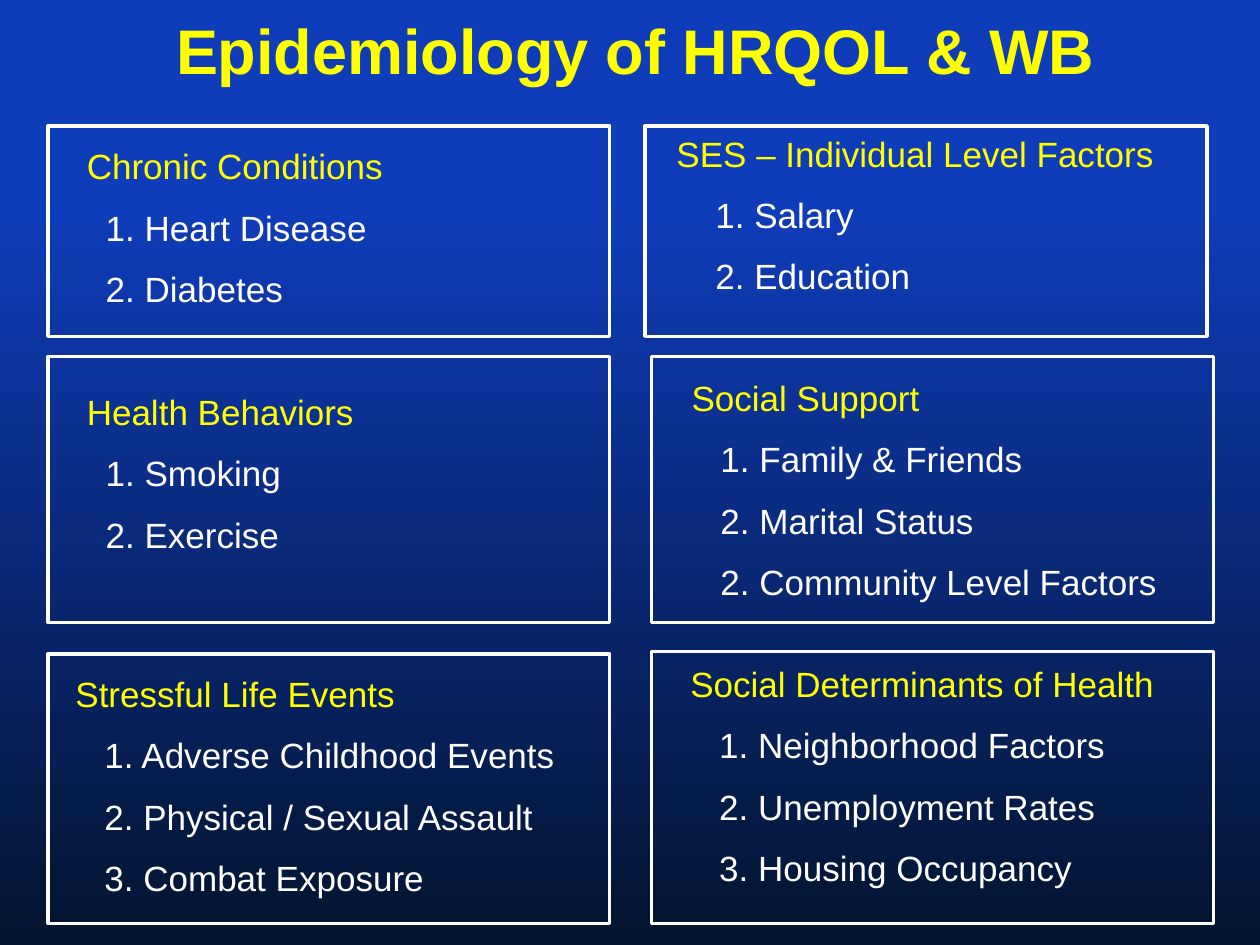
import pptx
import pptx.dml.color
import pptx.enum.shapes
import pptx.enum.text
import pptx.util
from dataclasses import dataclass

Inches = pptx.util.Inches
Pt = pptx.util.Pt
Color = pptx.dml.color.RGBColor.from_string


@dataclass(frozen=True)
class Theme:
    font: str = "Arial"
    accent: str = "FFFF00"
    light: str = "FFFFFF"
    sky: str = "0F3CB9"
    night: str = "03142F"
    title_size: int = 36
    text_size: int = 20
    item_gap: int = 11
    border: int = 2


THEME = Theme()
LEFT = 0.38
PANEL_WIDTH = 4.46

PANELS = [
    ((LEFT, 1, 1.67), (0.59, 1.1, 3.99), 0.15, "Chronic Conditions",
     ["1. Heart Disease", "2. Diabetes"]),
    ((5.12, 1, 1.67), (5.27, 1, 3.99), 0.31, "SES – Individual Level Factors",
     ["1. Salary", "2. Education"]),
    ((LEFT, 2.83, 2.11), (0.59, 3.05, 3.99), 0.15, "Health Behaviors",
     ["1. Smoking", "2. Exercise"]),
    ((5.17, 2.83, 2.11), (5.39, 2.94, 4.06), 0.23, "Social Support",
     ["1. Family & Friends", "2. Marital Status", "2. Community Level Factors"]),
    ((LEFT, 5.19, 2.14), (0.5, 5.29, 4.31), 0.23, "Stressful Life Events",
     ["1. Adverse Childhood Events", "2. Physical / Sexual Assault",
      "3. Combat Exposure"]),
    ((5.17, 5.17, 2.16), (5.38, 5.21, 4.48), 0.23, "Social Determinants of Health",
     ["1. Neighborhood Factors", "2. Unemployment Rates", "3. Housing Occupancy"]),
]


def paint_background(page):
    fill = page.background.fill
    fill.gradient()
    fill.gradient_angle = 270
    stops = zip(fill.gradient_stops, [(0.22, THEME.sky), (1, THEME.night)])
    for stop, (position, color) in stops:
        stop.position = position
        stop.color.rgb = Color(color)


def add_span(para, text, size, color, bold=False):
    span = para.add_run()
    span.text = text
    span.font.name = THEME.font
    span.font.size = Pt(size)
    span.font.bold = bold
    span.font.color.rgb = Color(color)


def fill_title(page, text):
    box = page.shapes.title
    box.left, box.top = Inches(0.42), Inches(0.19)
    box.width, box.height = Inches(9.25), Inches(0.5)
    frame = box.text_frame
    frame.auto_size = pptx.enum.text.MSO_AUTO_SIZE.NONE
    frame.vertical_anchor = pptx.enum.text.MSO_ANCHOR.MIDDLE
    para = frame.paragraphs[0]
    para.alignment = pptx.enum.text.PP_ALIGN.CENTER
    para.line_spacing = 0.85
    add_span(para, text, THEME.title_size, THEME.accent, bold=True)


def add_border(page, left, top, height):
    border = page.shapes.add_shape(
        pptx.enum.shapes.MSO_SHAPE.RECTANGLE,
        Inches(left), Inches(top), Inches(PANEL_WIDTH), Inches(height))
    border.shadow.inherit = False
    border.fill.background()
    border.line.color.rgb = Color(THEME.light)
    border.line.width = Pt(THEME.border)


def add_list(page, place, indent, heading, items):
    left, top, width = place
    height = 0.5 + 0.48 * len(items)
    box = page.shapes.add_textbox(
        Inches(left), Inches(top), Inches(width), Inches(height))
    frame = box.text_frame
    frame.word_wrap = True
    add_span(frame.paragraphs[0], heading, THEME.text_size, THEME.accent)
    for item in items:
        para = frame.add_paragraph()
        para.space_before = Pt(THEME.item_gap)
        para._p.get_or_add_pPr().set("marL", str(Inches(indent)))
        add_span(para, item, THEME.text_size, THEME.light)


def main():
    deck = pptx.Presentation()
    deck.slide_width, deck.slide_height = Inches(10), Inches(7.5)
    page = deck.slides.add_slide(deck.slide_layouts.get_by_name("Title Only"))
    paint_background(page)
    fill_title(page, "Epidemiology of HRQOL & WB")
    for border, place, indent, heading, items in PANELS:
        add_border(page, *border)
        add_list(page, place, indent, heading, items)
    deck.save("out.pptx")


if __name__ == "__main__":
    main()
